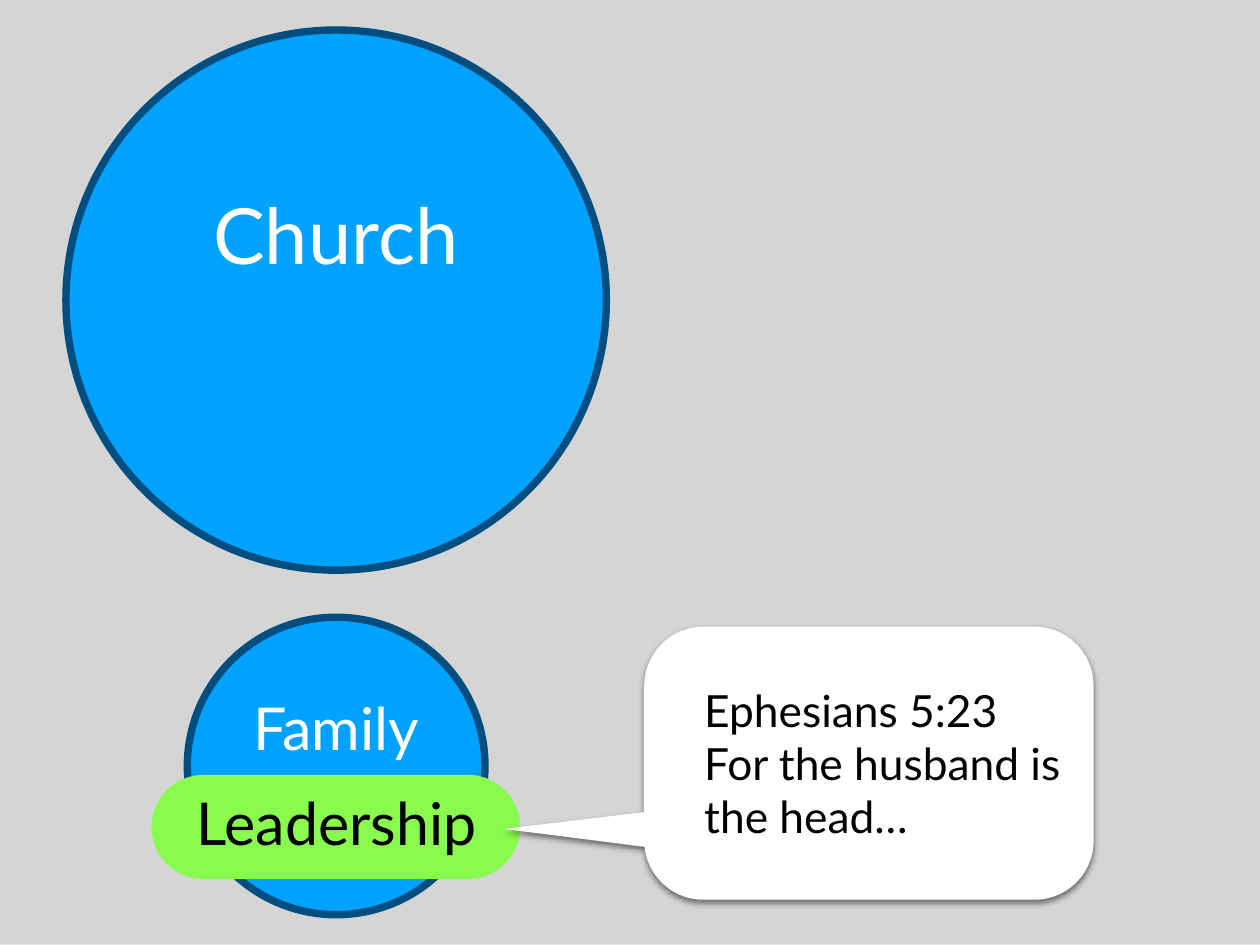
"""Slide with church and family circles, a leadership pill and a verse callout."""
from math import cos, radians, sin

from lxml.etree import SubElement
from pptx import Presentation
from pptx.dml.color import RGBColor
from pptx.enum.shapes import MSO_SHAPE as Kind
from pptx.enum.text import MSO_ANCHOR as Anchor, MSO_AUTO_SIZE as Fit, PP_ALIGN as Align
from pptx.oxml.ns import qn
from pptx.util import Inches, Pt

GRAY = RGBColor(0xD5, 0xD5, 0xD5)
BLUE = RGBColor(0x00, 0xA2, 0xFF)
NAVY = RGBColor(0x00, 0x4D, 0x80)
GREEN = RGBColor(0x89, 0xFA, 0x4E)
WHITE = RGBColor(0xFF, 0xFF, 0xFF)
BLACK = RGBColor(0x00, 0x00, 0x00)

COLS, ROWS = 128, 96
deck = Presentation()
deck.slide_width, deck.slide_height = Inches(14.22), Inches(10.67)
cell = deck.slide_width / COLS
slide = deck.slides.add_slide(deck.slide_layouts[6])
shapes = slide.shapes


def draw(kind, box, fill, edge=None):
    shape = shapes.add_shape(kind, *[round(n * cell) for n in box])
    shape.shadow.inherit = False
    shape.fill.solid()
    shape.fill.fore_color.rgb = fill
    if edge is None:
        shape.line.fill.background()
    else:
        shape.line.color.rgb = edge
        shape.line.width = Pt(6)
    return shape


def write(box, lines, size, color, align, wrap):
    frame = shapes.add_textbox(*[round(n * cell) for n in box]).text_frame
    frame.word_wrap = wrap
    frame.auto_size = Fit.NONE if wrap else Fit.SHAPE_TO_FIT_TEXT
    frame.vertical_anchor = Anchor.MIDDLE
    frame.margin_left = frame.margin_right = Inches(0.06)
    frame.margin_top = frame.margin_bottom = Inches(0.06)
    for i, line in enumerate(lines):
        para = frame.add_paragraph() if i else frame.paragraphs[0]
        para.alignment = align
        run = para.add_run()
        run.text = line
        run.font.name = "Lato"
        run.font.size = Pt(size)
        run.font.color.rgb = color


draw(Kind.RECTANGLE, (0, 0, COLS, ROWS), GRAY)

for mid, rad in ((30.5, 27.45), (77.85, 15.12)):
    draw(Kind.OVAL, (34.15 - rad, mid - rad, 2 * rad, 2 * rad), BLUE, NAVY)

write((20.34, 17.91, 27.54, 11.61), ["Church"], 63, WHITE, Align.CENTER, False)
write((24.57, 69.3, 19.17, 9.09), ["Family"], 48, WHITE, Align.CENTER, False)

pill = draw(Kind.ROUNDED_RECTANGLE, (15.4, 78.75, 37.44, 10.6), GREEN)
pill.adjustments[0] = 0.5
write((18.09, 79, 32.2, 9.09), ["Leadership"], 48, BLACK, Align.CENTER, False)

left, top, right, base, rad = 65.45, 63.7, 111.1, 91.45, 6
turns = (
    (left + rad, top + rad, 180, 270),
    (right - rad, top + rad, 270, 360),
    (right - rad, base - rad, 0, 90),
    (left + rad, base - rad, 90, 174),
)
dots = [
    (x + rad * cos(radians(deg)), y + rad * sin(radians(deg)))
    for x, y, start, stop in turns
    for deg in range(start, stop + 1, 3)
]
dots += [(51.2, 84.25), (left, 82.55)]
dots = [(x * cell, y * cell) for x, y in dots]
pen = shapes.build_freeform(*dots[0])
pen.add_line_segments(dots[1:], close=True)
bubble = pen.convert_to_shape()
bubble.shadow.inherit = False
bubble.fill.solid()
bubble.fill.fore_color.rgb = WHITE
bubble.line.fill.background()
glow = bubble.element.spPr.find(qn("a:effectLst"))
shade = SubElement(
    glow, qn("a:outerShdw"), blurRad=str(Pt(5)), dist=str(Pt(2)), dir="5400000", rotWithShape="0"
)
tint = SubElement(shade, qn("a:srgbClr"), val=str(BLACK))
SubElement(tint, qn("a:alpha"), val="50000")

verse = ["Ephesians 5:23", "For the husband is the head…"]
write((71, 65.7, 39.8, 23.6), verse, 36, BLACK, Align.LEFT, True)

deck.save("out.pptx")
